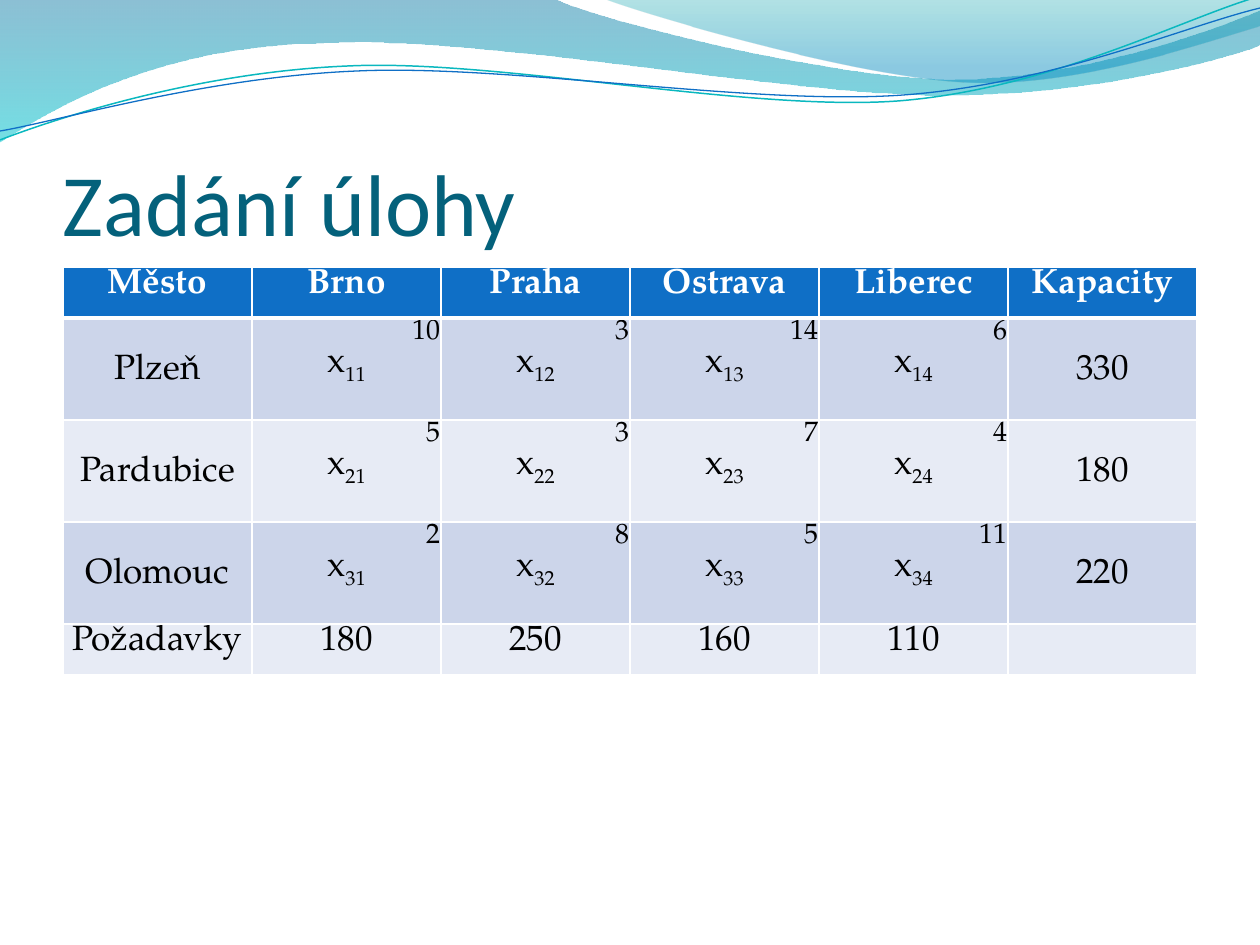
from math import cos, radians, sin

from lxml import etree
from pptx import Presentation
from pptx.dml.color import RGBColor
from pptx.enum.text import MSO_ANCHOR, PP_ALIGN
from pptx.oxml import parse_xml
from pptx.oxml.ns import nsdecls, qn
from pptx.util import Pt

PX = 914400 / 126
CENTER, RIGHT = PP_ALIGN.CENTER, PP_ALIGN.RIGHT
BOTTOM = MSO_ANCHOR.BOTTOM
SERIF = "TeX Gyre Pagella"
WHITE, BLUE, TEAL = "FFFFFF", "0F6FC6", "0AB8BF"
BANDS = ("CCD5EA", "E7EBF5")
TILT = 2.7  # degrees the two curves are turned to the left

# Table content: each route is a shipping cost per destination
HEADER = ("Město", "Brno", "Praha", "Ostrava", "Liberec", "Kapacity")
SUPPLIERS = (
    ("Plzeň", (10, 3, 14, 6), 330),
    ("Pardubice", (5, 3, 7, 4), 180),
    ("Olomouc", (2, 8, 5, 11), 220),
)
DEMANDS = ("Požadavky", "180", "250", "160", "110", "")

# Wave outlines: one point is a straight step, three are a Bézier curve
LEFT_WAVE = [
    [(0, 0)], [(554, -1)], [(600, 21), (837, 79), (955, 79)],
    [(1075, 79), (1207, 33), (1260, 11)], [(1261, 45)],
    [(1239, 55), (1096, 96), (940, 95)], [(784, 95), (481, 35), (324, 43)],
    [(163, 45), (58, 105), (-1, 142)],
]
RIGHT_WAVE = [
    [(604, -1)], [(641, 14), (859, 78), (969, 82)],
    [(1079, 87), (1211, 40), (1260, 26)], [(1260, 0)],
]
TEAL_CURVE = [
    [(0, 140)], [(60, 117), (199, 72), (349, 66)],
    [(498, 59), (747, 112), (898, 101)], [(1050, 89), (1182, 19), (1257, -3)],
]
BLUE_CURVE = [
    [(0, 131)], [(59, 121), (207, 77), (357, 71)],
    [(508, 64), (752, 106), (903, 95)], [(1053, 84), (1185, 26), (1260, 8)],
]


def px(length):
    return round(length * PX)


def rgb(value):
    return RGBColor.from_string(value)


def add_run(paragraph, text, *, size=20, color="000000", font=SERIF,
            bold=False, subscript=False, align=CENTER):
    paragraph.alignment = align
    run = paragraph.add_run()
    run.text = text
    run.font.size = Pt(size)
    run.font.name = font
    run.font.bold = bold
    run.font.color.rgb = rgb(color)
    if subscript:
        run.font._element.set("baseline", "-25000")


def add_outline(slide, steps, close):
    """Build the outline from its end points, then bend the curved steps."""
    steps = [[(px(x), px(y)) for x, y in step] for step in steps]
    ends = [step[-1] for step in steps]
    builder = slide.shapes.build_freeform(*ends[0])
    builder.add_line_segments(ends[1:], close=close)
    shape = builder.convert_to_shape()
    shape.shadow.inherit = False
    segments = list(shape._element.iter(qn("a:lnTo")))
    for segment, step in zip(segments, steps[1:]):
        if len(step) == 3:
            segment.tag = qn("a:cubicBezTo")
            segment.remove(segment[0])
            for x, y in step:
                etree.SubElement(segment, qn("a:pt"),
                                 x=str(x - shape.left), y=str(y - shape.top))
    return shape


def add_wave(slide, steps, stops):
    wave = add_outline(slide, steps, True)
    wave.line.fill.background()
    wave.fill.gradient()
    wave.fill.gradient_angle = 270
    for stop, (position, color, opacity) in zip(wave.fill.gradient_stops, stops):
        stop.position = position
        stop.color.rgb = rgb(color)
    tints = wave._element.spPr.iter(qn("a:srgbClr"))
    for tint, (position, color, opacity) in zip(tints, stops):
        tint.append(parse_xml(
            f'<a:alpha {nsdecls("a")} val="{opacity * 1000}"/>'))


def turn(point, pivot):
    dx, dy = point[0] - pivot[0], point[1] - pivot[1]
    c, s = cos(radians(TILT)), sin(radians(TILT))
    return pivot[0] + dx * c - dy * s, pivot[1] + dx * s + dy * c


def add_curve(slide, steps, pivot, color, width):
    level = [[turn(point, pivot) for point in step] for step in steps]
    curve = add_outline(slide, level, False)
    curve.rotation = 360 - TILT
    curve.fill.background()
    curve.line.color.rgb = rgb(color)
    curve.line.width = Pt(width)


def add_title(slide, text):
    box = slide.shapes.add_textbox(px(63), px(97), px(1134), px(157))
    frame = box.text_frame
    frame.word_wrap = True
    frame.vertical_anchor = BOTTOM
    frame.margin_left = frame.margin_right = frame.margin_bottom = 0
    frame.margin_top = px(6)
    add_run(frame.paragraphs[0], text, size=50, color="04617B",
            font="Calibri", align=PP_ALIGN.LEFT)


def style_cell(cell, fill, top=1, bottom=1):
    cell.fill.solid()
    cell.fill.fore_color.rgb = rgb(fill)
    cell.margin_left = cell.margin_right = cell.margin_top = px(1)
    cell.margin_bottom = 0
    borders = (("L", 1), ("R", 1), ("T", top), ("B", bottom))
    for place, (side, width) in enumerate(borders):
        cell._tc.get_or_add_tcPr().insert(place, parse_xml(
            f'<a:ln{side} {nsdecls("a")} w="{Pt(width)}"><a:solidFill>'
            f'<a:srgbClr val="{WHITE}"/></a:solidFill></a:ln{side}>'))


def fill_route(cell, cost, index):
    frame = cell.text_frame
    add_run(frame.paragraphs[0], str(cost), size=16, align=RIGHT)
    variable = frame.add_paragraph()
    add_run(variable, "x")
    add_run(variable, index, subscript=True)


def add_transport_table(slide):
    heights = [51] + [102] * len(SUPPLIERS) + [51]
    table = slide.shapes.add_table(
        len(heights), len(HEADER), px(63), px(267),
        px(189 * len(HEADER)), px(sum(heights))).table
    table.horz_banding = False
    for row, height in zip(table.rows, heights):
        row.height = px(height)

    # Header and demand rows
    last = len(heights) - 1
    for col, (city, demand) in enumerate(zip(HEADER, DEMANDS)):
        heading, total = table.cell(0, col), table.cell(last, col)
        style_cell(heading, BLUE, bottom=3)
        add_run(heading.text_frame.paragraphs[0], city, color=WHITE, bold=True)
        style_cell(total, BANDS[1])
        if demand:
            add_run(total.text_frame.paragraphs[0], demand)

    # Supplier rows
    for row, (supplier, costs, capacity) in enumerate(SUPPLIERS, 1):
        for col in range(len(HEADER)):
            style_cell(table.cell(row, col), BANDS[(row - 1) % 2],
                       top=3 if row == 1 else 1)
        for col, text in ((0, supplier), (len(HEADER) - 1, str(capacity))):
            cell = table.cell(row, col)
            cell.margin_top = px(36)
            add_run(cell.text_frame.paragraphs[0], text)
        for col, cost in enumerate(costs, 1):
            fill_route(table.cell(row, col), cost, f"{row}{col}")


def main():
    prs = Presentation()
    prs.slide_width, prs.slide_height = px(1260), px(945)
    slide = prs.slides.add_slide(prs.slide_layouts[6])

    # Wave decoration
    add_wave(slide, LEFT_WAVE, ((0, "0074A1", 45), (1, "00C6CF", 55)))
    add_wave(slide, RIGHT_WAVE, ((0, "00A1A9", 30), (0.8, "008BBF", 45)))
    add_curve(slide, TEAL_CURVE, (629, 72), TEAL, 0.85)
    add_curve(slide, BLUE_CURVE, (629, 74), BLUE, 0.75)

    # Content
    add_title(slide, "Zadání úlohy")
    add_transport_table(slide)
    prs.save("out.pptx")


if __name__ == "__main__":
    main()
